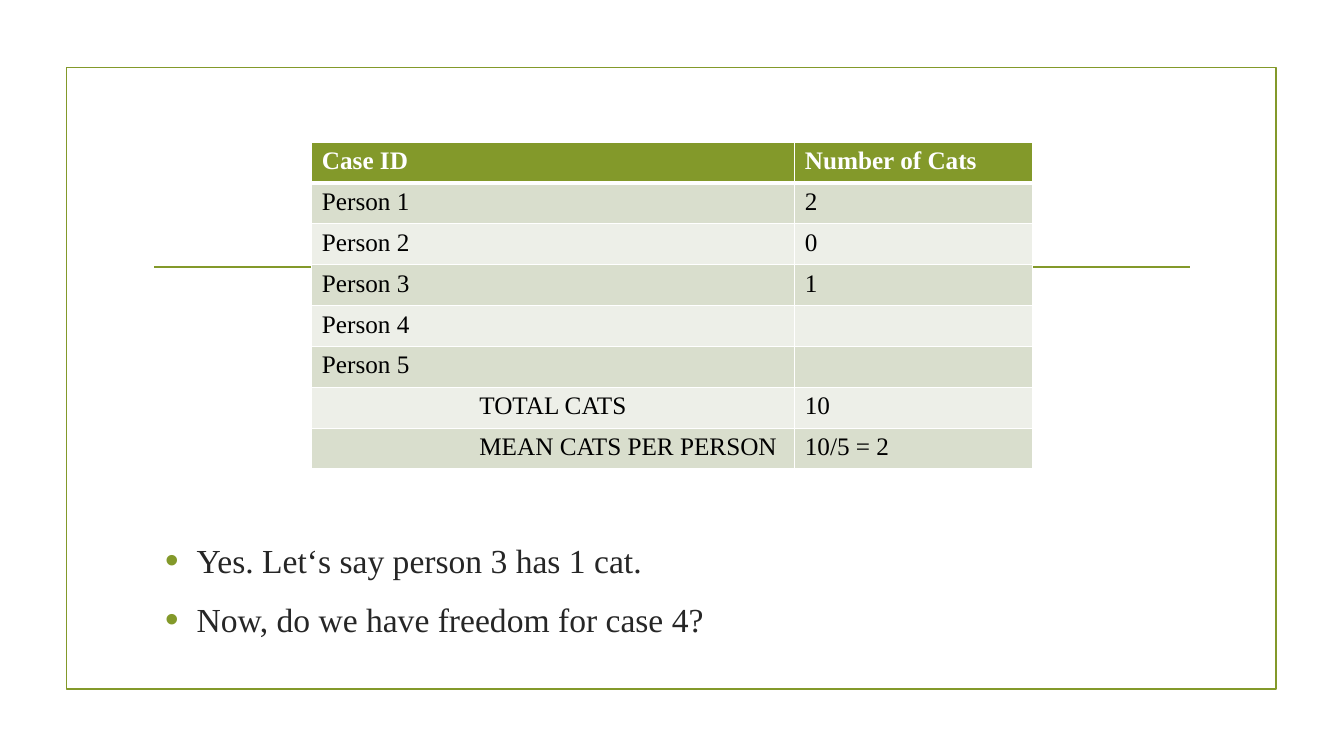
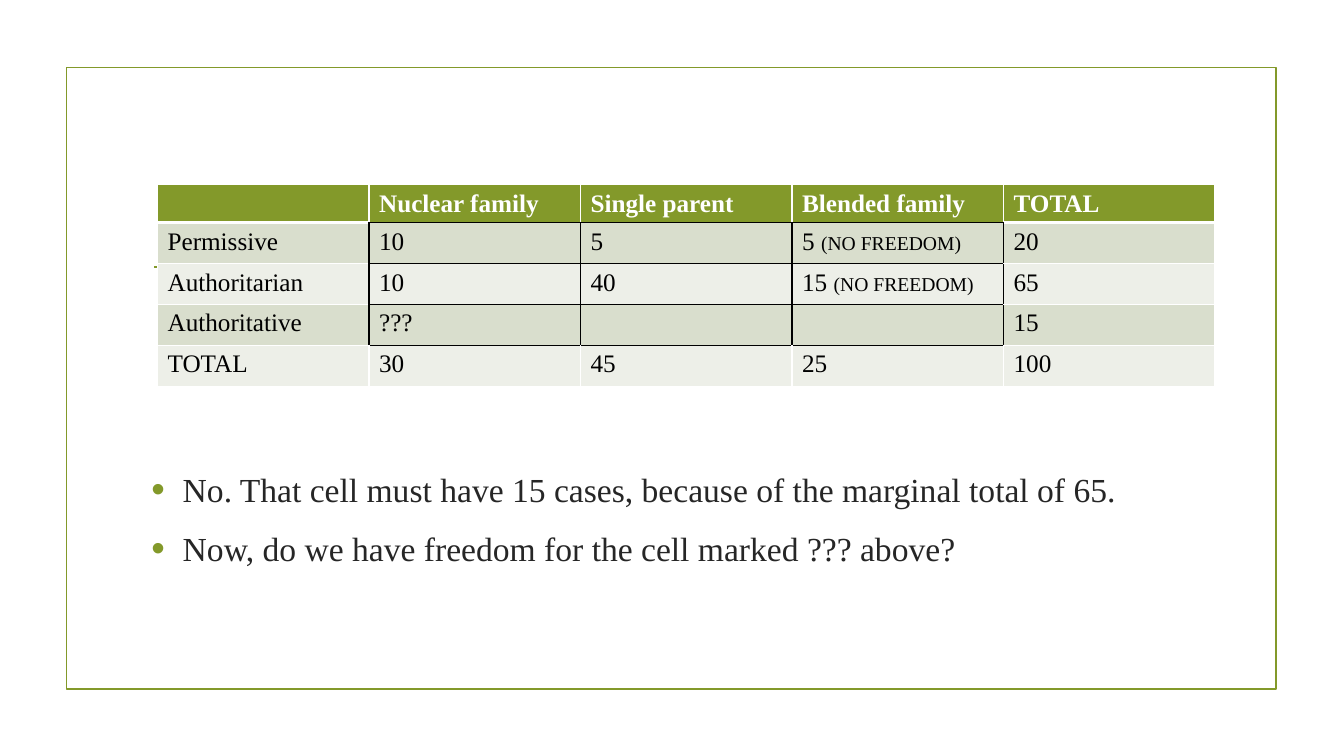
from dataclasses import dataclass

from lxml.etree import SubElement
from pptx import Presentation
from pptx.dml.color import RGBColor
from pptx.enum.shapes import MSO_CONNECTOR, MSO_SHAPE
from pptx.enum.text import MSO_ANCHOR, MSO_AUTO_SIZE, PP_ALIGN
from pptx.oxml.ns import qn
from pptx.util import Cm, Pt


@dataclass(frozen=True)
class Theme:
    font: str = "Times New Roman"
    accent: str = "83992A"
    white: str = "FFFFFF"
    black: str = "000000"
    body: str = "262626"
    bands: tuple = ("EDEFE8", "D9DECD")
    body_size: int = 24
    cell_size: int = 18
    note_size: int = 14
    rule_width: float = 1.25
    border_width: int = 1
    header_border_width: int = 3


@dataclass(frozen=True)
class Box:
    left: float
    top: float
    width: float
    height: float

    def lengths(self):
        return Cm(self.left), Cm(self.top), Cm(self.width), Cm(self.height)


THEME = Theme()
FRAME = Box(1.68, 1.7, 30.48, 15.67)
RULE = Box(3.89, 6.73, 26.11, 0)
CELL_INDENT = 4.22


def format_span(span, size, color, bold=False):
    span.font.name = THEME.font
    span.font.size = Pt(size)
    span.font.bold = bold
    span.font.color.rgb = RGBColor.from_string(color)


def style_line(line):
    line.color.rgb = RGBColor.from_string(THEME.accent)
    line.width = Pt(THEME.rule_width)


def decorate_layout(layout, page):
    for holder in list(layout.placeholders):
        if holder.placeholder_format.idx >= 10:
            holder.element.getparent().remove(holder.element)
    frame = page.shapes.add_shape(MSO_SHAPE.RECTANGLE, *FRAME.lengths())
    frame.shadow.inherit = False
    frame.fill.background()
    left, top, width, height = RULE.lengths()
    rule = page.shapes.add_connector(
        MSO_CONNECTOR.STRAIGHT, left, top, left + width, top + height
    )
    for shape in (frame, rule):
        style_line(shape.line)
    SubElement(rule.element.spPr, qn("a:effectLst"))
    for shape in (frame, rule):
        layout.shapes.element.append(shape.element)


def add_bullet(para):
    properties = para._p.get_or_add_pPr()
    properties.set("marL", str(Cm(0.79)))
    properties.set("indent", str(-Cm(0.79)))
    color = SubElement(properties, qn("a:buClr"))
    SubElement(color, qn("a:srgbClr"), val=THEME.accent)
    SubElement(properties, qn("a:buSzPct"), val="115000")
    SubElement(properties, qn("a:buFont"), typeface="Arial")
    SubElement(properties, qn("a:buChar"), char="•")


def fill_body(body, box, lines):
    body.left, body.top, body.width, body.height = box.lengths()
    frame = body.text_frame
    frame.text = "\n".join(lines)
    frame.auto_size = MSO_AUTO_SIZE.NONE
    frame.vertical_anchor = MSO_ANCHOR.TOP
    for index, para in enumerate(frame.paragraphs):
        add_bullet(para)
        para.alignment = PP_ALIGN.LEFT
        para.space_before = Pt(7 if index else 0)
        para.space_after = Pt(6)
        for span in para.runs:
            format_span(span, THEME.body_size, THEME.body)


def set_border(cell, side, color, width):
    line = SubElement(
        cell._tc.get_or_add_tcPr(), qn(f"a:ln{side}"), w=str(Pt(width))
    )
    fill = SubElement(line, qn("a:solidFill"))
    SubElement(fill, qn("a:srgbClr"), val=color)


def draw_borders(cell, row, column, outlined):
    neighbours = {
        "L": (row, column - 1),
        "R": (row, column + 1),
        "T": (row - 1, column),
        "B": (row + 1, column),
    }
    for side, neighbour in neighbours.items():
        color, width = THEME.white, THEME.border_width
        if (row, column) in outlined or neighbour in outlined:
            color = THEME.black
        elif {row, neighbour[0]} == {0, 1}:
            width = THEME.header_border_width
        set_border(cell, side, color, width)


def write_cell(cell, value, is_header):
    para = cell.text_frame.paragraphs[0]
    color = THEME.white if is_header else THEME.black
    parts = value if isinstance(value, tuple) else (value,)
    for part, size in zip(parts, (THEME.cell_size, THEME.note_size)):
        if part:
            span = para.add_run()
            span.text = part
            format_span(span, size, color, is_header)
    if not para.runs:
        ending = SubElement(
            para._p, qn("a:endParaRPr"), sz=str(THEME.cell_size * 100)
        )
        SubElement(ending, qn("a:latin"), typeface=THEME.font)


def add_grid(page, box, rows, widths, header_height, indented=(), outlined=()):
    table = page.shapes.add_table(len(rows), len(widths), *box.lengths()).table
    for column, width in zip(table.columns, widths):
        column.width = Cm(width)
    row_height = (box.height - header_height) / (len(rows) - 1)
    for row, values in enumerate(rows):
        table.rows[row].height = Cm(row_height if row else header_height)
        for column, value in enumerate(values):
            cell = table.cell(row, column)
            write_cell(cell, value, row == 0)
            draw_borders(cell, row, column, outlined)
            cell.fill.solid()
            fill = THEME.bands[row % 2] if row else THEME.accent
            cell.fill.fore_color.rgb = RGBColor.from_string(fill)
            if value in indented:
                cell.margin_left = Cm(CELL_INDENT)


def add_page(deck, layout, body_box, lines):
    page = deck.slides.add_slide(layout)
    title = page.shapes.title
    title.element.getparent().remove(title.element)
    fill_body(page.placeholders[1], body_box, lines)
    return page


def add_cats_table(page):
    totals = ("TOTAL CATS", "MEAN CATS PER PERSON")
    rows = [
        ("Case ID", "Number of Cats"),
        ("Person 1", "2"),
        ("Person 2", "0"),
        ("Person 3", "1"),
        ("Person 4", ""),
        ("Person 5", ""),
        (totals[0], "10"),
        (totals[1], "10/5 = 2"),
    ]
    box = Box(7.86, 3.58, 18.16, 8.24)
    add_grid(page, box, rows, (12.17, 5.99), 1.03, indented=totals)


def add_family_table(page):
    note = "(NO FREEDOM)"
    rows = [
        ("", "Nuclear family", "Single parent", "Blended family", "TOTAL"),
        ("Permissive", "10", "5", ("5 ", note), "20"),
        ("Authoritarian", "10", "40", ("15 ", note), "65"),
        ("Authoritative", "???", "", "", "15"),
        ("TOTAL", "30", "45", "25", "100"),
    ]
    inner = {(row, column) for row in range(1, 4) for column in range(1, 4)}
    box = Box(3.97, 4.65, 26.65, 5.08)
    add_grid(page, box, rows, [box.width / 5] * 5, 0.96, outlined=inner)


def main():
    deck = Presentation()
    deck.slide_width, deck.slide_height = Cm(33.87), Cm(19.05)
    layout = deck.slide_layouts[1]

    cats = add_page(
        deck,
        layout,
        Box(3.91, 13.48, 26.67, 3.66),
        ("Yes. Let‘s say person 3 has 1 cat.", "Now, do we have freedom for case 4?"),
    )
    decorate_layout(layout, cats)
    add_cats_table(cats)

    families = add_page(
        deck,
        layout,
        Box(3.56, 11.69, 26.67, 3.1),
        (
            "No. That cell must have 15 cases, because of the marginal total of 65.",
            "Now, do we have freedom for the cell marked ??? above?",
        ),
    )
    add_family_table(families)
    deck.save("out.pptx")


if __name__ == "__main__":
    main()
